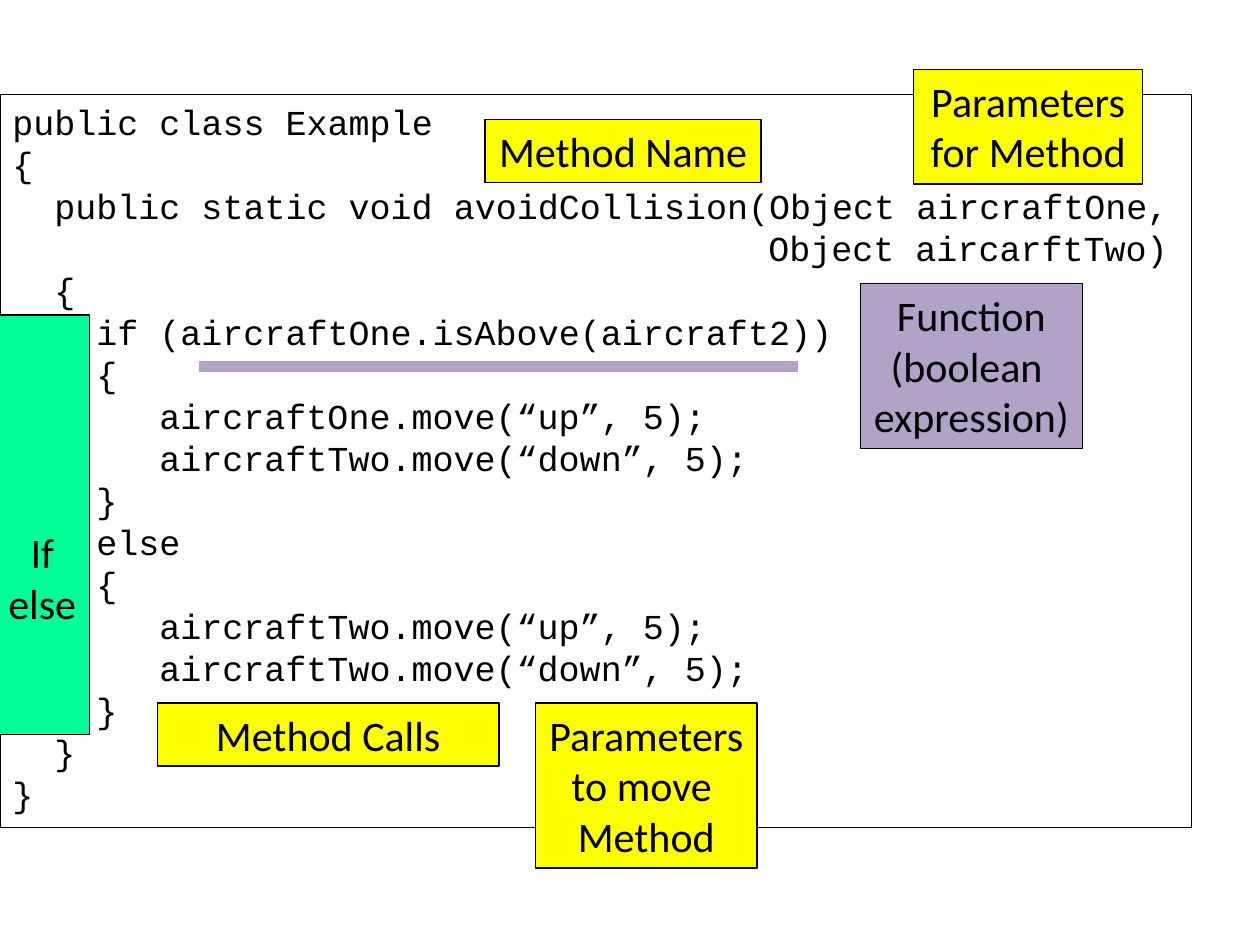
from dataclasses import dataclass

from lxml import etree
from pptx import Presentation
from pptx.dml.color import RGBColor
from pptx.enum.shapes import MSO_CONNECTOR, MSO_SHAPE
from pptx.enum.text import MSO_ANCHOR, PP_ALIGN
from pptx.oxml.ns import qn
from pptx.shapes.autoshape import Shape
from pptx.slide import Slide
from pptx.text.text import Font
from pptx.util import Inches, Pt

RECTANGLE = MSO_SHAPE.RECTANGLE
STRAIGHT = MSO_CONNECTOR.STRAIGHT
TOP = MSO_ANCHOR.TOP
LEFT, CENTER = PP_ALIGN.LEFT, PP_ALIGN.CENTER

BLACK = RGBColor(0x00, 0x00, 0x00)
YELLOW = RGBColor(0xFF, 0xFF, 0x00)
GREEN = RGBColor(0x00, 0xFF, 0x99)
PURPLE = RGBColor(0xB3, 0xA2, 0xC7)

CODE_FORMAT = {"name": "Courier New", "size": Pt(20)}
LABEL_FORMAT = {"name": "Calibri", "size": Pt(24)}
CHARACTER_WIDTH = 1 / 6


@dataclass(frozen=True)
class CodeLine:
    indent: int
    text: str


@dataclass(frozen=True)
class Label:
    text: str
    left: float
    top: float
    width: float
    height: float
    fill: RGBColor = YELLOW
    margin_top: float = 0.05
    wrap: bool = False


CODE = [
    CodeLine(0, "public class Example"),
    CodeLine(0, "{"),
    CodeLine(2, "public static void avoidCollision(Object aircraftOne,"),
    CodeLine(36, "Object aircarftTwo)"),
    CodeLine(2, "{"),
    CodeLine(4, "if (aircraftOne.isAbove(aircraft2))"),
    CodeLine(4, "{"),
    CodeLine(7, "aircraftOne.move(“up”, 5);"),
    CodeLine(7, "aircraftTwo.move(“down”, 5);"),
    CodeLine(4, "}"),
    CodeLine(4, "else"),
    CodeLine(4, "{"),
    CodeLine(7, "aircraftTwo.move(“up”, 5);"),
    CodeLine(7, "aircraftTwo.move(“down”, 5);"),
    CodeLine(4, "}"),
    CodeLine(2, "}"),
    CodeLine(0, "}"),
]

LABELS = [
    Label("Method Name", 3.85, 0.95, 2.19, 0.5),
    Label("Parameters\vfor Method", 7.25, 0.55, 1.82, 0.91),
    Label("If\velse", -0.04, 2.5, 0.75, 3.33, GREEN, margin_top=1.68),
    Label("Function\v(boolean \vexpression)", 6.83, 2.25, 1.76, 1.31, PURPLE),
    Label("Method Calls", 1.25, 5.58, 2.71, 0.5, wrap=True),
    Label("Parameters\vto move \vMethod", 4.25, 5.58, 1.76, 1.31),
]


def apply_format(font: Font, values: dict) -> None:
    for attribute, value in values.items():
        setattr(font, attribute, value)
    font.color.rgb = BLACK


def add_outlined_box(slide: Slide, left: float, top: float,
                     width: float, height: float) -> Shape:
    box = slide.shapes.add_shape(
        RECTANGLE, Inches(left), Inches(top), Inches(width), Inches(height))
    box.shadow.inherit = False
    box.line.color.rgb = BLACK
    box.line.width = Pt(0.75)
    box.text_frame.vertical_anchor = TOP
    return box


def add_code(slide: Slide, lines: list[CodeLine]) -> None:
    listing = add_outlined_box(slide, 0, 0.75, 9.46, 5.82)
    listing.fill.background()
    frame = listing.text_frame
    frame.word_wrap = True
    frame.text = "\n".join(line.text for line in lines)
    for paragraph, line in zip(frame.paragraphs, lines):
        paragraph.alignment = LEFT
        indent = Inches(line.indent * CHARACTER_WIDTH)
        paragraph._p.get_or_add_pPr().set("marL", str(indent))
        apply_format(paragraph.runs[0].font, CODE_FORMAT)


def add_label(slide: Slide, label: Label) -> None:
    box = add_outlined_box(
        slide, label.left, label.top, label.width, label.height)
    box.fill.solid()
    box.fill.fore_color.rgb = label.fill
    frame = box.text_frame
    frame.word_wrap = label.wrap
    frame.margin_top = Inches(label.margin_top)
    paragraph = frame.paragraphs[0]
    paragraph.text = label.text
    paragraph.alignment = CENTER
    for run in paragraph.runs:
        apply_format(run.font, LABEL_FORMAT)


def add_underline(slide: Slide, start: float, end: float, y: float) -> None:
    underline = slide.shapes.add_connector(
        STRAIGHT, Inches(start), Inches(y), Inches(end), Inches(y))
    underline.line.color.rgb = PURPLE
    underline.line.width = Pt(6)
    etree.SubElement(underline._element.spPr, qn("a:effectLst"))


def main() -> None:
    presentation = Presentation()
    presentation.slide_width = Inches(10)
    presentation.slide_height = Inches(7.5)
    slide = presentation.slides.add_slide(presentation.slide_layouts[6])
    add_code(slide, CODE)
    for label in LABELS:
        add_label(slide, label)
    add_underline(slide, 1.58, 6.33, 2.91)
    presentation.save("out.pptx")


if __name__ == "__main__":
    main()
